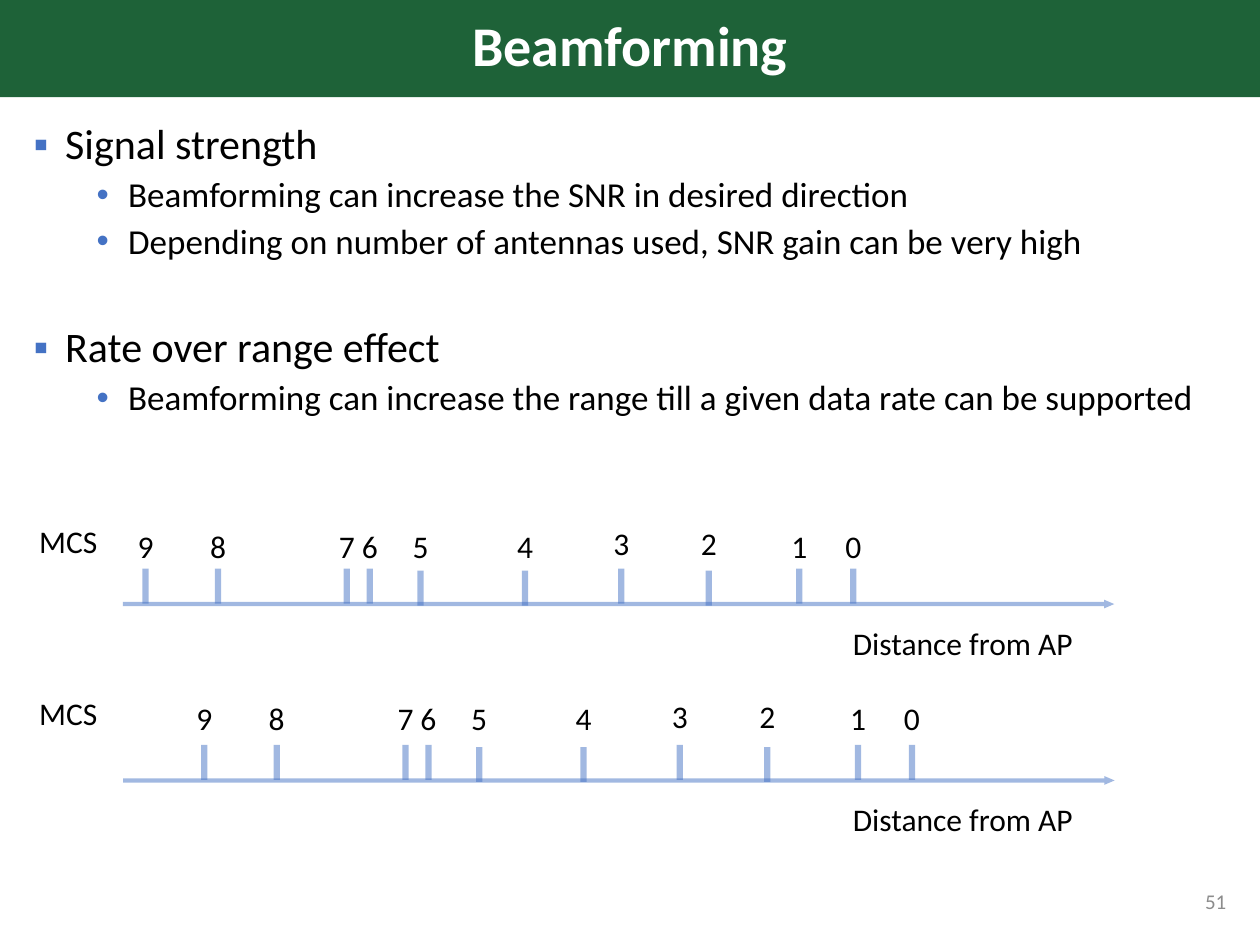
from dataclasses import dataclass

from lxml import etree
from pptx import Presentation
from pptx.dml.color import RGBColor
from pptx.enum import shapes, text
from pptx.oxml import ns
from pptx.util import Pt


@dataclass(frozen=True)
class Theme:
    font: str = "Calibri"
    green: RGBColor = RGBColor(0x1E, 0x62, 0x38)
    blue: RGBColor = RGBColor(0x44, 0x72, 0xC4)
    white: RGBColor = RGBColor(0xFF, 0xFF, 0xFF)
    black: RGBColor = RGBColor(0, 0, 0)
    grey: RGBColor = RGBColor(0x8C, 0x8C, 0x8C)
    title_size: int = 32
    topic_size: int = 24
    detail_size: int = 20
    label_size: int = 18
    number_size: int = 12
    axis_opacity: int = 50


@dataclass(frozen=True)
class Level:
    bullet: str
    indent: float
    size: int
    before: float


@dataclass(frozen=True)
class Point:
    words: str
    level: Level
    extra_before: float = 0


@dataclass(frozen=True)
class Mark:
    mcs: str
    x: float  # centre on the upper axis
    tick_drop: float = 0
    label_lift: float = 0


@dataclass(frozen=True)
class Axis:
    left: float
    top: float
    label_top: float
    shift: float


THEME = Theme()
TOPIC = Level("▪", 18, THEME.topic_size, 10)
DETAIL = Level("•", 54, THEME.detail_size, 5)
HANGING = 18

POINTS = [
    Point("Signal strength", TOPIC),
    Point("Beamforming can increase the SNR in desired direction", DETAIL),
    Point("Depending on number of antennas used, SNR gain can be very high", DETAIL),
    Point("Rate over range effect", TOPIC, 27),
    Point("Beamforming can increase the range till a given data rate can be supported", DETAIL),
]
MARKS = [
    Mark("9", 83.2), Mark("8", 124.6), Mark("7", 198.2), Mark("6", 211.3),
    Mark("5", 240.3, 1.2), Mark("4", 300, 1.2), Mark("3", 355, 0, 1.5),
    Mark("2", 405, 1.2, 1.5), Mark("1", 456.8), Mark("0", 487.6),
]
AXES = [Axis(70.2, 342.7, 297.5, 0), Axis(70.4, 443.5, 396, 33.5)]  # without, with beamforming


def add_run(paragraph, words: str, size: float, color: RGBColor, bold: bool = False) -> None:
    run = paragraph.add_run()
    run.text = words
    run.font.name = THEME.font
    run.font.size = Pt(size)
    run.font.bold = bold
    run.font.color.rgb = color


def place(shape, left: float, top: float, width: float, height: float) -> None:
    shape.left, shape.top = Pt(left), Pt(top)
    shape.width, shape.height = Pt(width), Pt(height)


def add_frame(slide, left: float, top: float, width: float, height: float):
    frame = slide.shapes.add_textbox(Pt(left), Pt(top), Pt(width), Pt(height)).text_frame
    frame.word_wrap = True
    return frame


def add_label(slide, words: str, left: float, top: float, width: float) -> None:
    paragraph = add_frame(slide, left, top, width, 29).paragraphs[0]
    paragraph.alignment = text.PP_ALIGN.CENTER
    add_run(paragraph, words, THEME.label_size, THEME.black)


def add_bar(slide, kind, left: float, top: float, width: float, height: float):
    """Add a translucent blue part of an axis."""
    bar = slide.shapes.add_shape(kind, Pt(left), Pt(top), Pt(width), Pt(height))
    bar.shadow.inherit = False
    bar.line.fill.background()
    bar.fill.solid()
    bar.fill.fore_color.rgb = THEME.blue
    color = bar.fill._xPr.find(".//" + ns.qn("a:srgbClr"))
    etree.SubElement(color, ns.qn("a:alpha"), val=str(THEME.axis_opacity * 1000))
    return bar


def set_bullet(paragraph, level: Level) -> None:
    props = paragraph._p.get_or_add_pPr()
    props.set("marL", str(Pt(level.indent)))
    props.set("indent", str(-Pt(HANGING)))
    color = etree.SubElement(props, ns.qn("a:buClr"))
    etree.SubElement(color, ns.qn("a:srgbClr"), val=str(THEME.blue))
    etree.SubElement(props, ns.qn("a:buFont"), typeface="Arial")
    etree.SubElement(props, ns.qn("a:buChar"), char=level.bullet)


def add_title(slide, words: str) -> None:
    title = slide.shapes.title
    place(title, 0, 0, 720, 55.5)
    title.fill.solid()
    title.fill.fore_color.rgb = THEME.green
    frame = title.text_frame
    frame.auto_size = text.MSO_AUTO_SIZE.NONE
    frame.vertical_anchor = text.MSO_ANCHOR.MIDDLE
    paragraph = frame.paragraphs[0]
    paragraph.alignment = text.PP_ALIGN.CENTER
    paragraph.line_spacing = 0.9
    add_run(paragraph, words, THEME.title_size, THEME.white, bold=True)


def add_points(slide, points: list[Point]) -> None:
    frame = add_frame(slide, 12.2, 67, 695.5, 461.5)
    for index, point in enumerate(points):
        paragraph = frame.add_paragraph() if index else frame.paragraphs[0]
        paragraph.level = 0 if point.level is TOPIC else 1
        paragraph.line_spacing = 0.9
        paragraph.space_before = Pt(point.level.before + point.extra_before)
        set_bullet(paragraph, point.level)
        add_run(paragraph, point.words, point.level.size, THEME.black)


def add_axis(slide, axis: Axis) -> None:
    arrow = add_bar(slide, shapes.MSO_SHAPE.RIGHT_ARROW, axis.left, axis.top, 566.5, 5)
    arrow.adjustments[0], arrow.adjustments[1] = 0.5, 1.17
    add_label(slide, "MCS", 9.5, axis.label_top - 3, 59)
    for mark in MARKS:
        center = mark.x + axis.shift
        add_bar(slide, shapes.MSO_SHAPE.RECTANGLE,
                center - 1.8, axis.top - 17.8 + mark.tick_drop, 3.6, 20)
        add_label(slide, mark.mcs, center - 13.7, axis.label_top - mark.label_lift, 27.4)
    add_label(slide, "Distance from AP", 464.2, axis.top + 10.2, 172)


def add_slide_number(slide, number: str) -> None:
    frame = add_frame(slide, 545.8, 500.5, 162, 28.8)
    frame.vertical_anchor = text.MSO_ANCHOR.MIDDLE
    paragraph = frame.paragraphs[0]
    paragraph.alignment = text.PP_ALIGN.RIGHT
    add_run(paragraph, number, THEME.number_size, THEME.grey)


def main() -> None:
    deck = Presentation()
    deck.slide_width, deck.slide_height = Pt(720), Pt(540)
    slide = deck.slides.add_slide(deck.slide_layouts.get_by_name("Title Only"))

    # Heading and bullets
    add_title(slide, "Beamforming")
    add_points(slide, POINTS)
    add_slide_number(slide, "51")

    # Range of each MCS along the distance axes
    for axis in AXES:
        add_axis(slide, axis)

    deck.save("out.pptx")


if __name__ == "__main__":
    main()
